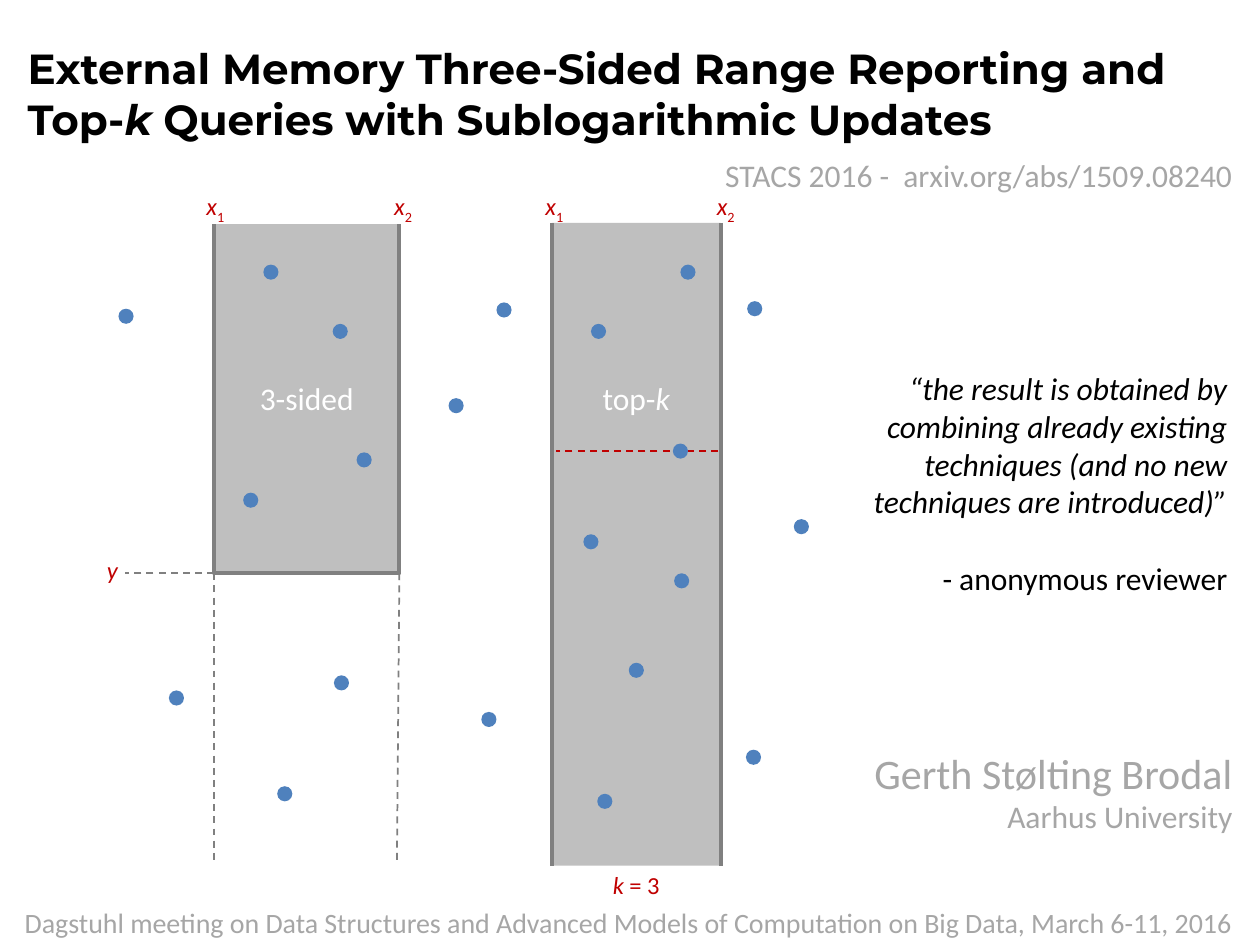
from dataclasses import dataclass
from typing import NamedTuple

import lxml.etree
import pptx
import pptx.dml.color
import pptx.enum.dml
import pptx.enum.shapes
import pptx.enum.text
import pptx.oxml.ns
import pptx.util

RGBColor = pptx.dml.color.RGBColor
ALIGN = pptx.enum.text.PP_ALIGN
FIT = pptx.enum.text.MSO_AUTO_SIZE

BLACK = RGBColor(0x00, 0x00, 0x00)
WHITE = RGBColor(0xFF, 0xFF, 0xFF)
PALE = RGBColor(0xA6, 0xA6, 0xA6)
RANGE_FILL = RGBColor(0xBF, 0xBF, 0xBF)
RANGE_EDGE = RGBColor(0x80, 0x80, 0x80)
RED = RGBColor(0xC0, 0x00, 0x00)
POINT_BLUE = RGBColor(0x4F, 0x81, 0xBD)

SLIDE_WIDTH = pptx.util.Inches(10)
SLIDE_HEIGHT = pptx.util.Inches(7.5)
COLUMNS, ROWS = 100, 75
POINT_SIZE = 1.2


class Spot(NamedTuple):
    column: float
    row: float


class Area(NamedTuple):
    column: float
    row: float
    columns: float
    rows: float


@dataclass(frozen=True)
class Words:
    text: str
    size: float
    color: RGBColor
    italic: bool = False
    bold: bool = False
    subscript: bool = False
    font: str = "Calibri"


@dataclass(frozen=True)
class Line:
    words: tuple[Words, ...]
    space_before: float = 0


def across(columns: float) -> int:
    return round(SLIDE_WIDTH * columns / COLUMNS)


def down(rows: float) -> int:
    return round(SLIDE_HEIGHT * rows / ROWS)


def box(area: Area) -> tuple[int, int, int, int]:
    return across(area.column), down(area.row), across(area.columns), down(area.rows)


def write(frame, lines: list[Line], align) -> None:
    frame.word_wrap = True
    for index, line in enumerate(lines):
        paragraph = frame.paragraphs[0] if index == 0 else frame.add_paragraph()
        paragraph.alignment = align
        paragraph.space_before = pptx.util.Pt(line.space_before)
        for words in line.words:
            run = paragraph.add_run()
            run.text = words.text
            run.font.name = words.font
            run.font.size = pptx.util.Pt(words.size)
            run.font.color.rgb = words.color
            run.font.italic = words.italic
            run.font.bold = words.bold
            if words.subscript:
                run._r.get_or_add_rPr().set("baseline", "-25000")


def add_text(shapes, area: Area, lines: list[Line], align=ALIGN.LEFT) -> None:
    frame = shapes.add_textbox(*box(area)).text_frame
    frame.auto_size = FIT.SHAPE_TO_FIT_TEXT
    write(frame, lines, align)


def add_line(shapes, start: Spot, end: Spot, color: RGBColor, width: float, dashed: bool) -> None:
    line = shapes.add_connector(
        pptx.enum.shapes.MSO_CONNECTOR.STRAIGHT,
        across(start.column), down(start.row), across(end.column), down(end.row),
    )
    line.line.color.rgb = color
    line.line.width = pptx.util.Pt(width)
    if dashed:
        line.line.dash_style = pptx.enum.dml.MSO_LINE.DASH
    lxml.etree.SubElement(line._element.spPr, pptx.oxml.ns.qn("a:effectLst"))


def add_filled(shapes, kind, area: Area, color: RGBColor) -> None:
    shape = shapes.add_shape(kind, *box(area))
    shape.shadow.inherit = False
    shape.fill.solid()
    shape.fill.fore_color.rgb = color
    shape.line.fill.background()


def add_axis_label(shapes, spot: Spot, letter: str, index: str = "") -> None:
    words = [Words(letter, 14, RED, italic=True)]
    if index:
        words.append(Words(index, 14, RED, subscript=True))
    add_text(shapes, Area(*spot, 3.9, 3.4), [Line(tuple(words))])


def add_top_k(shapes) -> None:
    left, top, right, bottom = 43.8, 17.7, 57.2, 68.7
    width = right - left
    add_filled(shapes, pptx.enum.shapes.MSO_SHAPE.RECTANGLE,
               Area(left, top, width, bottom - top), RANGE_FILL)
    for side in (left, right):
        add_line(shapes, Spot(side, top), Spot(side, bottom), RANGE_EDGE, 2.25, False)
    add_axis_label(shapes, Spot(42.3, 14.7), "x", "1")
    add_axis_label(shapes, Spot(55.9, 14.7), "x", "2")
    add_text(shapes, Area(left, 29.6, width, 4),
             [Line((Words("top-", 18, WHITE), Words("k", 18, WHITE, italic=True)))],
             ALIGN.CENTER)


def add_three_sided(shapes) -> None:
    left, top, right, bottom = 17, 17.8, 31.7, 45.5
    outline = shapes.build_freeform(across(left), down(top))
    outline.add_line_segments(
        [(across(x), down(y)) for x, y in ((left, bottom), (right, bottom), (right, top))],
        close=False,
    )
    region = outline.convert_to_shape()
    region.shadow.inherit = False
    region.fill.solid()
    region.fill.fore_color.rgb = RANGE_FILL
    region.line.color.rgb = RANGE_EDGE
    region.line.width = pptx.util.Pt(2.25)
    for start, end in (
        (Spot(left, bottom), Spot(9.9, bottom)),
        (Spot(left, bottom), Spot(left, 68.6)),
        (Spot(right, bottom), Spot(31.5, 68.6)),
    ):
        add_line(shapes, start, end, RANGE_EDGE, 1, True)
    add_axis_label(shapes, Spot(7.5, 43.6), "y")
    add_text(shapes, Area(left, 29.6, right - left, 4),
             [Line((Words("3-sided", 18, WHITE),))], ALIGN.CENTER)
    add_axis_label(shapes, Spot(15.4, 14.7), "x", "1")
    add_axis_label(shapes, Spot(30.3, 14.7), "x", "2")


POINTS = [
    Spot(47.4, 63), Spot(54, 21), Spot(20.9, 21), Spot(28.3, 35.9), Spot(19.3, 39.1),
    Spot(46.3, 42.4), Spot(26.5, 53.6), Spot(53.4, 35.2), Spot(9.4, 24.5),
    Spot(35.6, 31.6), Spot(53.5, 45.5), Spot(13.4, 54.8), Spot(38.2, 56.5),
    Spot(22, 62.4), Spot(26.4, 25.7), Spot(46.9, 25.7), Spot(49.9, 52.6),
    Spot(63, 41.2), Spot(59.2, 59.5), Spot(59.3, 23.9), Spot(39.4, 24),
]


def main() -> None:
    deck = pptx.Presentation()
    deck.slide_width, deck.slide_height = SLIDE_WIDTH, SLIDE_HEIGHT
    slide = deck.slides.add_slide(deck.slide_layouts[5])
    shapes = slide.shapes

    title = shapes.title
    title.left, title.top, title.width, title.height = box(Area(1.2, 2.9, 96.9, 9.1))
    title.text_frame.auto_size = FIT.NONE
    title.text_frame.vertical_anchor = pptx.enum.text.MSO_ANCHOR.TOP
    write(title.text_frame, [Line(tuple(
        Words(text, 24, BLACK, italic=italic, bold=True, font="Montserrat")
        for text, italic in (
            ("External Memory Three-Sided Range Reporting and Top-", False),
            ("k", True),
            (" Queries with Sublogarithmic Updates", False),
        )
    ))], ALIGN.LEFT)

    add_top_k(shapes.add_group_shape().shapes)
    add_three_sided(shapes.add_group_shape().shapes)
    add_line(shapes, Spot(57, 35.8), Spot(44.1, 35.8), RED, 1, True)
    for point in POINTS:
        add_filled(shapes, pptx.enum.shapes.MSO_SHAPE.OVAL,
                   Area(*point, POINT_SIZE, POINT_SIZE), POINT_BLUE)

    add_text(shapes, Area(43.8, 68.6, 13.4, 3.4),
             [Line((Words("k", 14, RED, italic=True), Words(" = 3", 14, RED)))], ALIGN.CENTER)
    add_text(shapes, Area(49.6, 11.9, 49.2, 4),
             [Line((Words("STACS 2016 -  arxiv.org/abs/1509.08240", 18, PALE),))], ALIGN.RIGHT)
    add_text(shapes, Area(62.6, 28.8, 35.8, 22.2), [
        Line((Words("“the result is obtained by combining already existing techniques "
                    "(and no new techniques are introduced)”", 18, BLACK, italic=True),)),
        Line((Words("- anonymous reviewer", 18, BLACK),), space_before=22),
    ], ALIGN.RIGHT)
    add_text(shapes, Area(64.2, 58.8, 34.6, 8.1), [
        Line((Words("Gerth Stølting Brodal", 24, PALE),)),
        Line((Words("Aarhus University", 18, PALE),)),
    ], ALIGN.RIGHT)
    add_text(shapes, Area(-0.2, 71.4, 100.2, 3.7), [Line((Words(
        "Dagstuhl meeting on Data Structures and Advanced Models of Computation "
        "on Big Data, March 6-11, 2016", 16, PALE),))], ALIGN.CENTER)

    deck.save("out.pptx")


if __name__ == "__main__":
    main()
